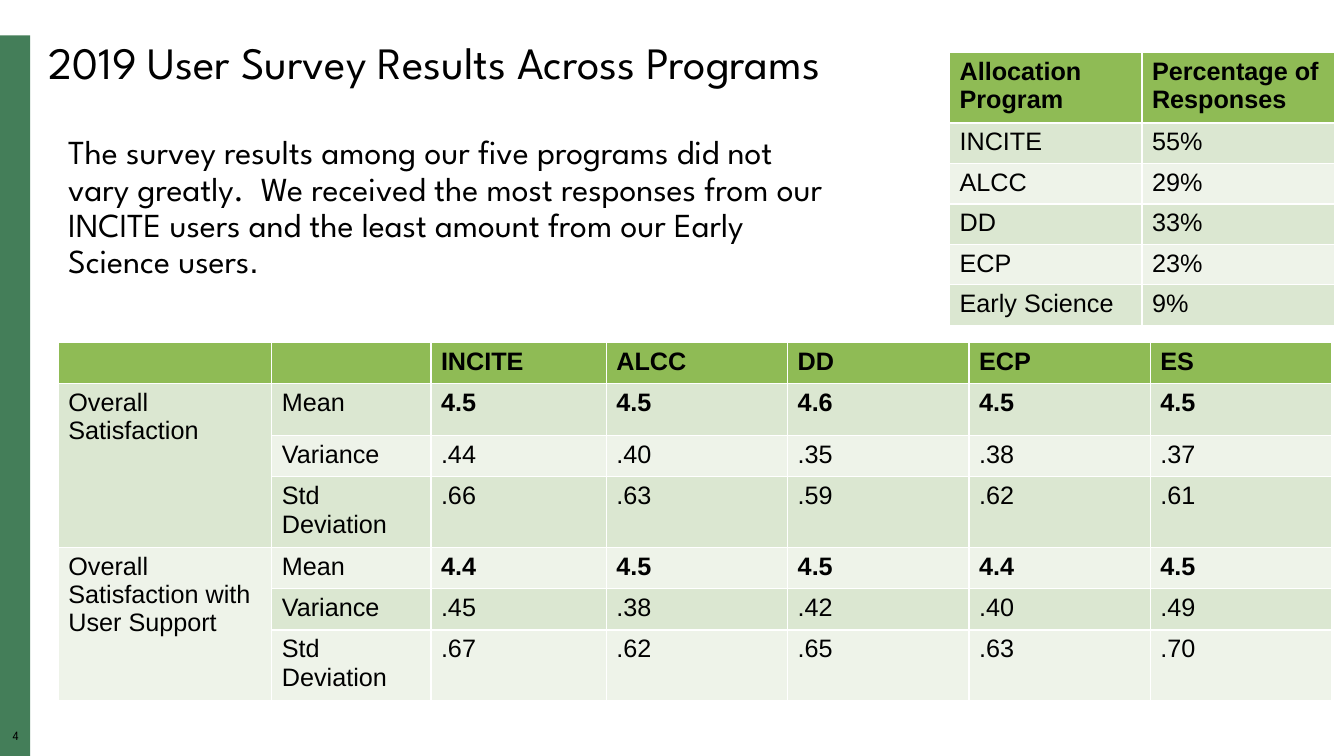
"""Build the slide on 2019 user survey results across programs."""
from dataclasses import dataclass

from pptx import Presentation
from pptx.dml.color import RGBColor
from pptx.enum.shapes import MSO_SHAPE
from pptx.enum.text import MSO_ANCHOR, PP_ALIGN
from pptx.util import Cm, Pt


@dataclass(frozen=True)
class Theme:
    heading_font: str = "League Spartan"
    table_font: str = "Arial"
    text: str = "000000"
    bar: str = "447E59"
    header: str = "8FBB55"
    bands: tuple[str, str] = ("EEF3E9", "DBE7D1")
    title_size: int = 32
    body_size: int = 24
    table_size: int = 18
    number_size: int = 9


@dataclass(frozen=True)
class Box:
    left: float
    top: float
    width: float
    height: float

    def lengths(self) -> tuple:
        return Cm(self.left), Cm(self.top), Cm(self.width), Cm(self.height)


@dataclass(frozen=True)
class TableSpec:
    left: float
    top: float
    widths: list[float]
    heights: list[float]
    rows: list[list[str]]
    group_size: int = 1


THEME = Theme()

SATISFACTION = TableSpec(
    1.47, 8.64,
    [5.38, 4.01, 4.42] + [4.57] * 4,
    [0.97, 1.32, 1.04, 1.68, 1.04, 1.04, 1.68],
    [
        ["", "", "INCITE", "ALCC", "DD", "ECP", "ES"],
        ["Overall Satisfaction", "Mean", "4.5", "4.5", "4.6", "4.5", "4.5"],
        ["", "Variance", ".44", ".40", ".35", ".38", ".37"],
        ["", "Std Deviation", ".66", ".63", ".59", ".62", ".61"],
        ["Overall Satisfaction with User Support", "Mean", "4.4", "4.5", "4.5", "4.4", "4.5"],
        ["", "Variance", ".45", ".38", ".42", ".40", ".49"],
        ["", "Std Deviation", ".67", ".62", ".65", ".63", ".70"],
    ],
    group_size=3,
)

RESPONSES = TableSpec(
    23.93, 1.32,
    [4.85] * 2,
    [1.74] + [1.02] * 5,
    [
        ["Allocation Program", "Percentage of Responses"],
        ["INCITE", "55%"],
        ["ALCC", "29%"],
        ["DD", "33%"],
        ["ECP", "23%"],
        ["Early Science", "9%"],
    ],
)


def style_font(font, name: str, size: int, bold: bool = False) -> None:
    font.name = name
    font.size = Pt(size)
    font.bold = bold
    font.color.rgb = RGBColor.from_string(THEME.text)


def write_text(sp, text: str, size: int, align: PP_ALIGN = PP_ALIGN.LEFT):
    tf = sp.text_frame
    tf.text = text
    tf.word_wrap = True
    p = tf.paragraphs[0]
    p.alignment = align
    p.line_spacing = 0.9
    style_font(p.runs[0].font, THEME.heading_font, size)
    return tf


def add_bar(slide, box: Box) -> None:
    sp = slide.shapes.add_shape(MSO_SHAPE.RECTANGLE, *box.lengths())
    sp.shadow.inherit = False
    sp.fill.solid()
    sp.fill.fore_color.rgb = RGBColor.from_string(THEME.bar)
    sp.line.fill.background()


def add_title(slide, box: Box, text: str) -> None:
    sp = slide.shapes.title
    sp.left, sp.top, sp.width, sp.height = box.lengths()
    tf = write_text(sp, text, THEME.title_size)
    tf.vertical_anchor = MSO_ANCHOR.MIDDLE


def add_number(slide, box: Box, text: str) -> None:
    sp = slide.shapes.add_textbox(*box.lengths())
    tf = write_text(sp, text, THEME.number_size, PP_ALIGN.CENTER)
    tf.margin_left = tf.margin_right = tf.margin_top = tf.margin_bottom = 0


def add_data_table(slide, spec: TableSpec) -> None:
    box = Box(spec.left, spec.top, sum(spec.widths), sum(spec.heights))
    table = slide.shapes.add_table(len(spec.rows), len(spec.widths), *box.lengths()).table
    for column, width in zip(table.columns, spec.widths):
        column.width = Cm(width)
    for r, (row, height) in enumerate(zip(spec.rows, spec.heights)):
        table.rows[r].height = Cm(height)
        for c, text in enumerate(row):
            cell = table.cell(r, c)
            cell.fill.solid()
            color = THEME.bands[r % 2] if r else THEME.header
            cell.fill.fore_color.rgb = RGBColor.from_string(color)
            cell.text_frame.text = text
            bold = r == 0 or (c > 1 and row[1] == "Mean")
            style_font(cell.text_frame.paragraphs[0].font, THEME.table_font, THEME.table_size, bold)
    if spec.group_size > 1:
        for first in range(1, len(spec.rows), spec.group_size):
            table.cell(first, 0).merge(table.cell(first + spec.group_size - 1, 0))


def main() -> None:
    prs = Presentation()
    prs.slide_width, prs.slide_height = Cm(33.87), Cm(19.05)
    slide = prs.slides.add_slide(prs.slide_layouts[5])
    add_bar(slide, Box(0, 0.89, 0.76, 18.16))
    add_number(slide, Box(0, 18.39, 0.79, 0.43), "4")
    add_title(slide, Box(0.97, 0.89, 31.72, 1.5), "2019 User Survey Results Across Programs")
    add_data_table(slide, SATISFACTION)
    summary = slide.shapes.add_textbox(*Box(1.47, 3.3, 19.89, 3.96).lengths())
    tf = write_text(
        summary,
        "The survey results among our five programs did not vary greatly.  "
        "We received the most responses from our INCITE users and the least "
        "amount from our Early Science users",
        THEME.body_size,
    )
    r = tf.paragraphs[0].add_run()
    r.text = "."
    style_font(r.font, THEME.table_font, THEME.body_size)
    add_data_table(slide, RESPONSES)
    prs.save("out.pptx")


if __name__ == "__main__":
    main()
